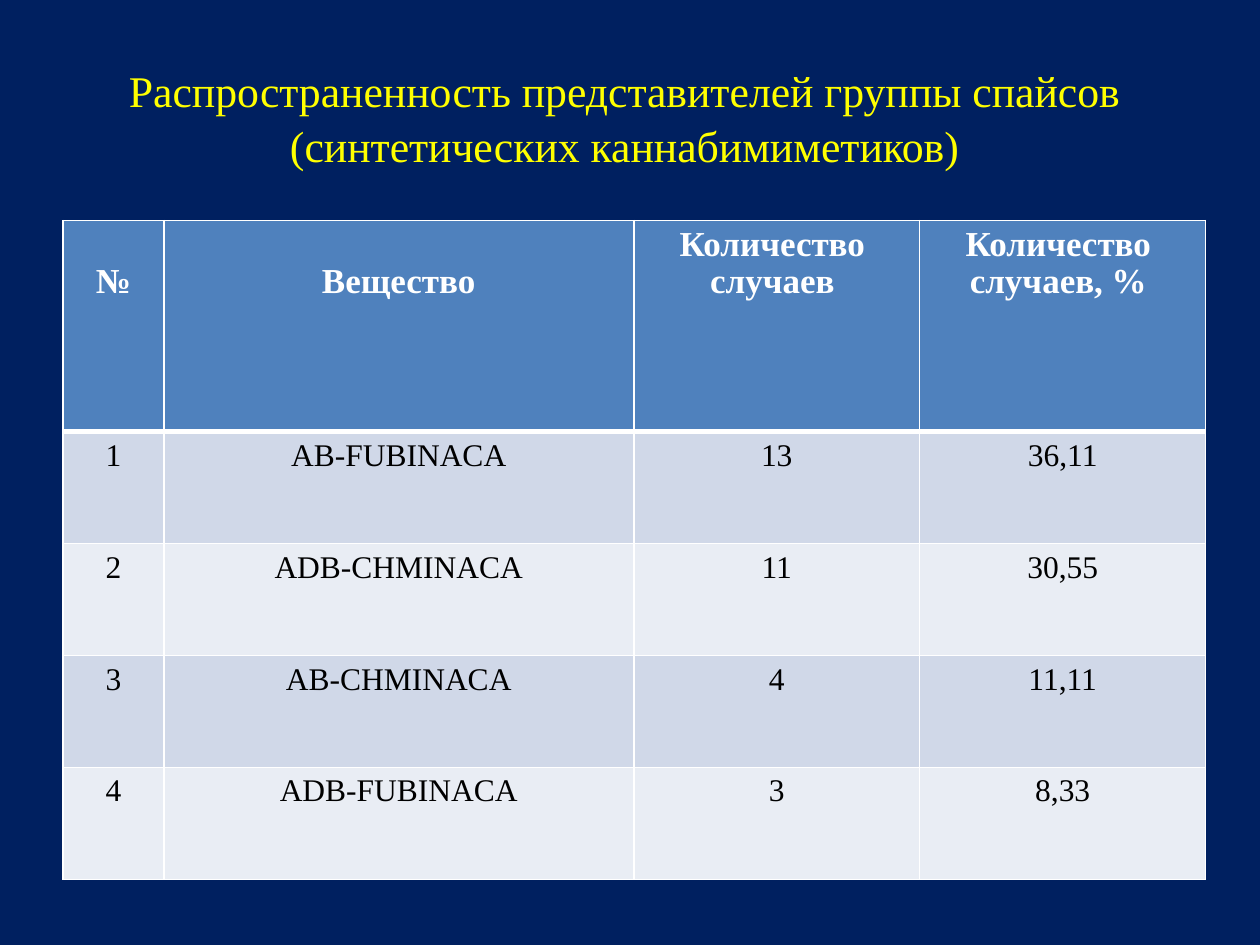
from lxml import etree
from pptx import Presentation
from pptx.dml.color import RGBColor
from pptx.enum.text import MSO_ANCHOR, PP_ALIGN
from pptx.oxml.ns import qn
from pptx.util import Inches, Pt

CENTER = PP_ALIGN.CENTER
MIDDLE = MSO_ANCHOR.MIDDLE
TITLE_ONLY = 5
FONT = "Times New Roman"
COLORS = {
    "background": "002060",
    "title": "FFFF00",
    "header": "4F81BD",
    "header_text": "FFFFFF",
    "odd_row": "D0D8E8",
    "even_row": "E9EDF4",
    "body_text": "000000",
    "border": "FFFFFF",
}
COLUMN_WIDTHS = [0.8, 3.73, 2.27, 2.27]
ROW_HEIGHTS = [1.68] + [0.89] * 4
ROWS = [
    ("\v№", "\vВещество", "Количество \nслучаев ", "Количество \nслучаев, % "),
    ("1", "AB-FUBINACA", "13", "36,11"),
    ("2", "ADB-CHMINACA", "11", "30,55"),
    ("3", "AB-CHMINACA", "4", "11,11"),
    ("4", "ADB-FUBINACA", "3", "8,33"),
]


def rgb(name):
    return RGBColor.from_string(COLORS[name])


def style_text(frame, size, color, bold=False, spacing=None):
    for paragraph in frame.paragraphs:
        paragraph.alignment = CENTER
        paragraph.line_spacing = spacing
        font = paragraph.font
        font.name, font.size, font.bold = FONT, Pt(size), bold
        font.color.rgb = rgb(color)


def set_borders(cell, widths):
    """Draw cell borders; widths maps each side (L, R, T, B) to points."""
    properties = cell._tc.get_or_add_tcPr()
    for index, (side, width) in enumerate(widths.items()):
        line = etree.Element(qn(f"a:ln{side}"), w=str(Pt(width)))
        fill = etree.SubElement(line, qn("a:solidFill"))
        etree.SubElement(fill, qn("a:srgbClr"), val=COLORS["border"])
        properties.insert(index, line)


def place_title(slide, left, top, width, height):
    title = slide.shapes.title
    title.left, title.top = Inches(left), Inches(top)
    title.width, title.height = Inches(width), Inches(height)
    frame = title.text_frame
    frame.text = ("Распространенность представителей группы спайсов \v"
                  "(синтетических каннабимиметиков) ")
    frame.vertical_anchor = MIDDLE
    style_text(frame, 25, "title", spacing=1.05)


def add_substance_table(slide, left, top, width, height):
    table = slide.shapes.add_table(
        len(ROWS), len(COLUMN_WIDTHS),
        Inches(left), Inches(top), Inches(width), Inches(height)).table
    for column, share in zip(table.columns, COLUMN_WIDTHS):
        column.width = Inches(width * share / sum(COLUMN_WIDTHS))
    for row, share in zip(table.rows, ROW_HEIGHTS):
        row.height = Inches(height * share / sum(ROW_HEIGHTS))

    for r, values in enumerate(ROWS):
        is_header = r == 0
        fill = "header" if is_header else "odd_row" if r % 2 else "even_row"
        for c, value in enumerate(values):
            cell = table.cell(r, c)
            cell.text = value
            cell.fill.solid()
            cell.fill.fore_color.rgb = rgb(fill)
            if is_header:
                style_text(cell.text_frame, 20, "header_text", True, 0.95)
            else:
                style_text(cell.text_frame, 18, "body_text")
            set_borders(cell, {"L": 1, "R": 1, "T": 3 if r == 1 else 1,
                               "B": 3 if is_header else 1})


def main():
    prs = Presentation()
    prs.slide_width, prs.slide_height = Inches(10), Inches(7.5)
    slide = prs.slides.add_slide(prs.slide_layouts[TITLE_ONLY])
    background = slide.background.fill
    background.solid()
    background.fore_color.rgb = rgb("background")
    place_title(slide, 0.5, 0.3, 9, 1.25)
    add_substance_table(slide, 0.5, 1.75, 9.07, 5.23)
    prs.save("out.pptx")


if __name__ == "__main__":
    main()
